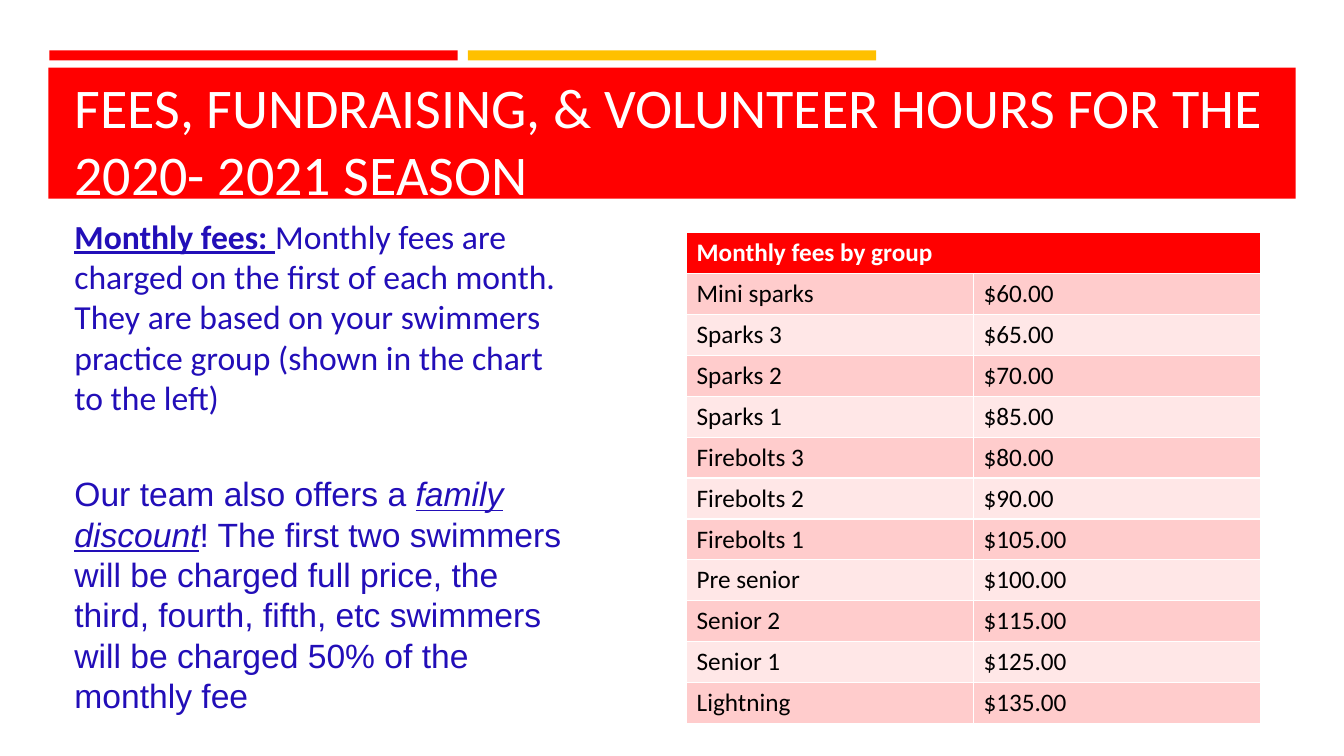
from pptx import Presentation
from pptx.dml.color import RGBColor
from pptx.enum.shapes import MSO_SHAPE
from pptx.enum.text import MSO_ANCHOR, MSO_AUTO_SIZE, PP_ALIGN
from pptx.util import Pt

RECTANGLE = MSO_SHAPE.RECTANGLE
TOP, MIDDLE, BOTTOM = MSO_ANCHOR.TOP, MSO_ANCHOR.MIDDLE, MSO_ANCHOR.BOTTOM
NO_AUTOFIT = MSO_AUTO_SIZE.NONE
LEFT = PP_ALIGN.LEFT

PX = 9144  # 100 px to the inch
COLORS = {
    "red": "FF0000",
    "gold": "FFC000",
    "white": "FFFFFF",
    "black": "000000",
    "blue": "220EB8",
    "band_dark": "FFCCCC",
    "band_light": "FFE7E7",
}


def rgb(name):
    return RGBColor.from_string(COLORS[name])


def add_run(paragraph, text, size, color, **font_format):
    run = paragraph.add_run()
    run.text = text
    run.font.color.rgb = rgb(color)
    for attribute, value in {"name": "Calibri", "size": Pt(size), **font_format}.items():
        setattr(run.font, attribute, value)


prs = Presentation()
prs.slide_width, prs.slide_height = 1333 * PX, 750 * PX
slide = prs.slides.add_slide(prs.slide_layouts[5])

# Accent bars and title banner
for left, top, width, height, color in [
    (49, 50, 405, 10, "red"),
    (464, 50, 405, 10, "gold"),
    (48, 67, 1237, 130, "red"),
]:
    bar = slide.shapes.add_shape(RECTANGLE, left * PX, top * PX, width * PX, height * PX)
    bar.fill.solid()
    bar.fill.fore_color.rgb = rgb(color)
    bar.line.fill.background()
    bar.shadow.inherit = False

# Title, brought in front of the banner
title = slide.shapes.title
title.left, title.top, title.width, title.height = 64 * PX, 94 * PX, 1206 * PX, 111 * PX
slide.shapes._spTree.append(title._element)
heading = title.text_frame
heading.paragraphs[0].alignment = LEFT
add_run(heading.paragraphs[0],
        "FEES, FUNDRAISING, & VOLUNTEER HOURS FOR THE 2020- 2021 SEASON", 40, "white")

# Explanation of the fees
explanation = slide.shapes.add_textbox(64 * PX, 214 * PX, 507 * PX, 496 * PX).text_frame

for frame, anchor in [(heading, BOTTOM), (explanation, TOP)]:
    frame_format = {
        "word_wrap": True, "auto_size": NO_AUTOFIT, "vertical_anchor": anchor,
        "margin_left": 10 * PX, "margin_right": 10 * PX,
        "margin_top": 0, "margin_bottom": 0,
    }
    for attribute, value in frame_format.items():
        setattr(frame, attribute, value)

monthly_fees = explanation.paragraphs[0]
add_run(monthly_fees, "Monthly fees: ", 24, "blue", bold=True, underline=True)
add_run(monthly_fees,
        "Monthly fees are charged on the first of each month. They are based on "
        "your swimmers practice group (shown in the chart to the left)", 24, "blue")

family_discount = explanation.add_paragraph()
family_discount.space_before = Pt(40)
add_run(family_discount, "Our team also offers a ", 24, "blue", name="Arial")
add_run(family_discount, "family discount", 24, "blue",
        name="Arial", italic=True, underline=True)
add_run(family_discount,
        "! The first two swimmers will be charged full price, the third, fourth, "
        "fifth, etc swimmers will be charged 50% of the monthly fee",
        24, "blue", name="Arial")

for paragraph in explanation.paragraphs:
    paragraph.line_spacing = Pt(28.8)

# Fee table
fees = [
    ("Mini sparks", 60),
    ("Sparks 3", 65),
    ("Sparks 2", 70),
    ("Sparks 1", 85),
    ("Firebolts 3", 80),
    ("Firebolts 2", 90),
    ("Firebolts 1", 105),
    ("Pre senior", 100),
    ("Senior 2", 115),
    ("Senior 1", 125),
    ("Lightning", 135),
]
row_count = len(fees) + 1
fee_table = slide.shapes.add_table(
    row_count, 2, 681 * PX, 231 * PX, 569 * PX, row_count * 40 * PX).table
fee_table.cell(0, 0).merge(fee_table.cell(0, 1))

rows = [("Monthly fees by group",)] + [(group, f"${fee:.2f}") for group, fee in fees]
for row, texts in enumerate(rows):
    is_header = row == 0
    fill = "red" if is_header else "band_dark" if row % 2 else "band_light"
    for column, text in enumerate(texts):
        cell = fee_table.cell(row, column)
        cell.fill.solid()
        cell.fill.fore_color.rgb = rgb(fill)
        cell.vertical_anchor = MIDDLE
        add_run(cell.text_frame.paragraphs[0], text, 18,
                "white" if is_header else "black", bold=is_header)

prs.save("out.pptx")
